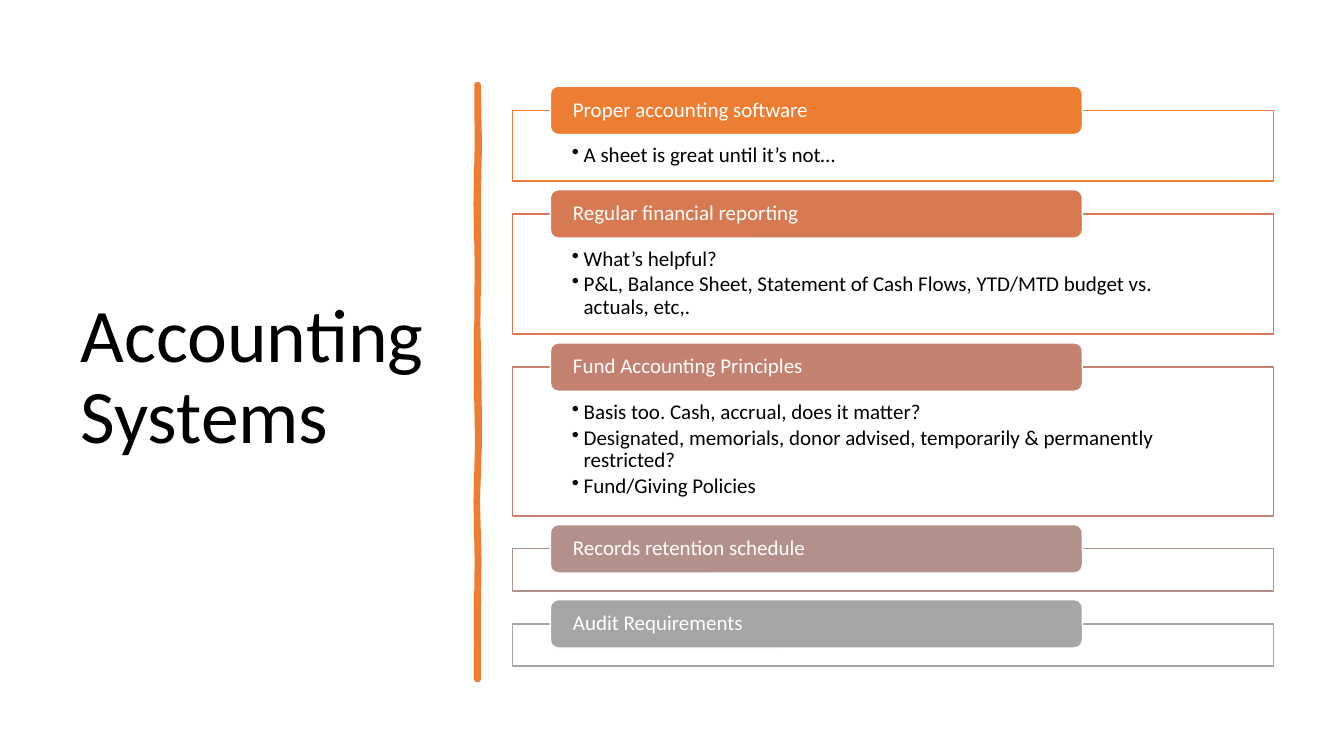
"""Build the Accounting Systems slide: title, brush divider and five sections."""
from lxml import etree
from pptx import Presentation, util as u
from pptx.dml.color import RGBColor
from pptx.enum import shapes, text
from pptx.oxml import ns

Cm, Pt = u.Cm, u.Pt


def rgb(value):
    return RGBColor.from_string(value)


def add_text(p, words, size, color):
    p.line_spacing = 0.9
    p.alignment = text.PP_ALIGN.LEFT
    r = p.add_run()
    r.text = words
    r.font.name = "Calibri"
    r.font.size = Pt(size)
    r.font.color.rgb = rgb(color)


prs = Presentation()
prs.slide_width, prs.slide_height = Cm(33.87), Cm(19.05)
s = prs.slides.add_slide(prs.slide_layouts[6])

title = s.shapes.add_textbox(Cm(1.78), Cm(1.78), Cm(9.5), Cm(15.52))
tf = title.text_frame
tf.word_wrap = True
tf.vertical_anchor = text.MSO_ANCHOR.MIDDLE
add_text(tf.paragraphs[0], "Accounting Systems", 54, "000000")

top, step = 2.13, 1.5
right_edge = [12.06, 12.09, 12.06, 12.07, 12.05, 12.08, 12.09, 12.04, 12.08, 12.06, 12.06]
left_edge = [12.01, 12.02, 11.99, 12.02, 12.01, 12.0, 12.03, 11.99, 12.02, 12.0, 12.01]
outline = [(Cm(x), Cm(top + i * step)) for i, x in enumerate(right_edge)]
outline += [(Cm(x), Cm(top + i * step)) for i, x in enumerate(left_edge)][::-1]
brush = s.shapes.build_freeform(*outline[0])
brush.add_line_segments(outline[1:], close=True)
divider = brush.convert_to_shape()
divider.shadow.inherit = False
divider.fill.solid()
divider.fill.fore_color.rgb = rgb("ED7D31")
divider.line.color.rgb = rgb("ED7D31")
divider.line.width = Pt(3.25)
etree.SubElement(divider.element.find(".//" + ns.qn("a:ln")), ns.qn("a:round"))

sections = [
    ("Proper accounting software", "ED7D31", 1.78, ["A sheet is great until it’s not…"]),
    ("Regular financial reporting", "D87A51", 3.03, [
        "What’s helpful?",
        "P&L, Balance Sheet, Statement of Cash Flows, YTD/MTD budget vs. actuals, etc,."]),
    ("Fund Accounting Principles", "C48170", 3.75, [
        "Basis too. Cash, accrual, does it matter?",
        "Designated, memorials, donor advised, temporarily & permanently restricted?",
        "Fund/Giving Policies"]),
    ("Records retention schedule", "B4908B", 1.06, []),
    ("Audit Requirements", "A5A5A5", 1.06, []),
]
gap, y = 0.83, 2.78
for heading, color, height, bullets in sections:
    frame = s.shapes.add_shape(shapes.MSO_SHAPE.RECTANGLE, Cm(12.91), Cm(y), Cm(19.18), Cm(height))
    label = s.shapes.add_shape(shapes.MSO_SHAPE.ROUNDED_RECTANGLE,
                               Cm(13.87), Cm(y - 0.61), Cm(13.41), Cm(1.22))
    for sp, fill, line in ((frame, "FFFFFF", color), (label, color, "FFFFFF")):
        sp.shadow.inherit = False
        sp.fill.solid()
        sp.fill.fore_color.rgb = rgb(fill)
        sp.line.color.rgb = rgb(line)
        sp.line.width = Pt(1)
    white = frame.element.find(".//" + ns.qn("a:srgbClr"))
    etree.SubElement(white, ns.qn("a:alpha"), val="90000")

    tf = label.text_frame
    tf.word_wrap = True
    tf.vertical_anchor = text.MSO_ANCHOR.MIDDLE
    tf.margin_left = tf.margin_right = Cm(0.51)
    tf.margin_top = tf.margin_bottom = 0
    add_text(tf.paragraphs[0], heading, 15, "FFFFFF")

    if bullets:
        tf = frame.text_frame
        tf.word_wrap = True
        tf.vertical_anchor = text.MSO_ANCHOR.TOP
        tf.margin_left = tf.margin_right = Cm(1.5)
        tf.margin_top, tf.margin_bottom = Cm(0.86), Cm(0.3)
    for i, words in enumerate(bullets):
        p = tf.add_paragraph() if i else tf.paragraphs[0]
        add_text(p, words, 15, "000000")
        p.space_after = Pt(2.25)
        pPr = p._p.get_or_add_pPr()
        pPr.set("marL", str(Cm(0.3)))
        pPr.set("indent", str(-Cm(0.3)))
        etree.SubElement(pPr, ns.qn("a:buChar"), char="•")
    y += height + gap

prs.save("out.pptx")
